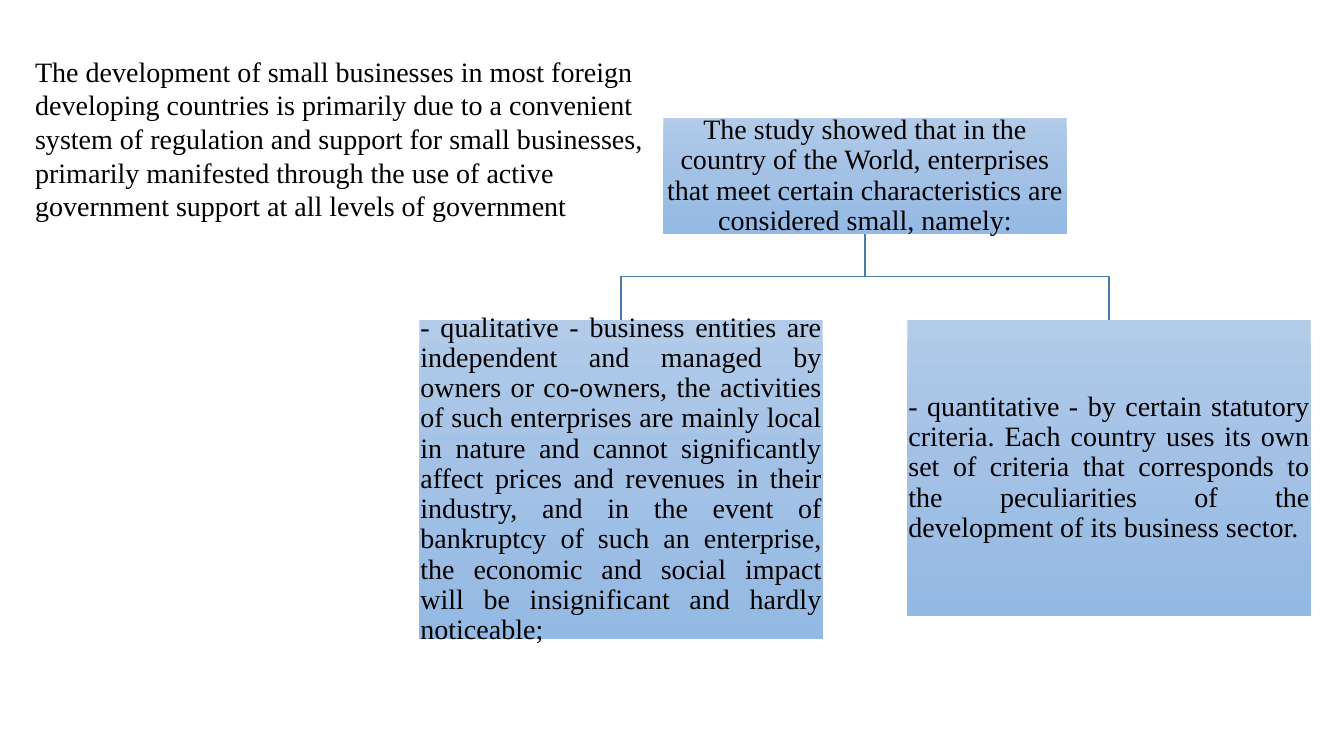
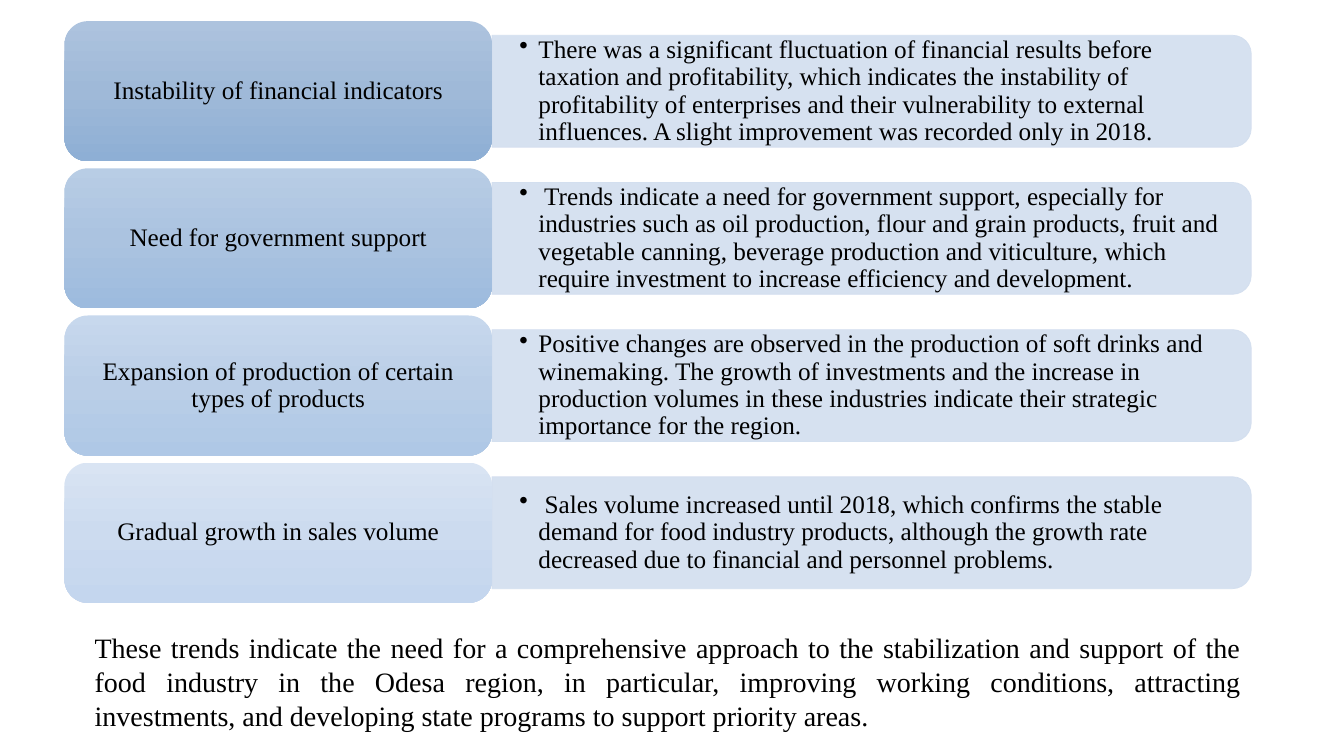
from copy import deepcopy

from pptx import Presentation
from pptx.dml.color import RGBColor
from pptx.enum.shapes import MSO_SHAPE
from pptx.enum.text import MSO_ANCHOR, MSO_AUTO_SIZE, PP_ALIGN
from pptx.oxml.ns import qn
from pptx.oxml.xmlchemy import OxmlElement
from pptx.util import Pt

PX = 9144
FONT = "Times New Roman"
INK = "000000"
LINK = "497CAB"
PANEL = "D2DEEF"
BOX_GRAD = ("B1CBE9", "A3C1E5", "93B9E4")
LEFT, CENTER, JUSTIFY = PP_ALIGN.LEFT, PP_ALIGN.CENTER, PP_ALIGN.JUSTIFY

INTRO = (
    "The development of small businesses in most foreign developing countries is primarily due to "
    "a convenient system of regulation and support for small businesses, primarily manifested "
    "through the use of active government support at all levels of government"
)
STUDY = (
    "The study showed that in the country of the World, enterprises that meet certain "
    "characteristics are considered small, namely:"
)
QUALITATIVE = (
    "- qualitative - business entities are independent and managed by owners or co-owners, the "
    "activities of such enterprises are mainly local in nature and cannot significantly affect "
    "prices and revenues in their industry, and in the event of bankruptcy of such an enterprise, "
    "the economic and social impact will be insignificant and hardly noticeable;"
)
QUANTITATIVE = (
    "- quantitative - by certain statutory criteria. Each country uses its own set of criteria "
    "that corresponds to the peculiarities of the development of its business sector."
)
TRENDS = [
    ("Instability of financial indicators",
     "There was a significant fluctuation of financial results before taxation and profitability, "
     "which indicates the instability of profitability of enterprises and their vulnerability to "
     "external influences. A slight improvement was recorded only in 2018.",
     ("ADC3DE", "9FB9D8", "8EAFD5")),
    ("Need for government support",
     " Trends indicate a need for government support, especially for industries such as oil "
     "production, flour and grain products, fruit and vegetable canning, beverage production and "
     "viticulture, which require investment to increase efficiency and development.",
     ("B8CDE5", "ABC3E0", "9DBBDE")),
    ("Expansion of production of certain types of products",
     "Positive changes are observed in the production of soft drinks and winemaking. The growth of "
     "investments and the increase in production volumes in these industries indicate their "
     "strategic importance for the region.",
     ("C7D8ED", "BACEE7", "AFC8E6")),
    ("Gradual growth in sales volume",
     " Sales volume increased until 2018, which confirms the stable demand for food industry "
     "products, although the growth rate decreased due to financial and personnel problems.",
     ("D9E4F3", "CCDBEF", "C4D6EE")),
]
SUMMARY = (
    "These trends indicate the need for a comprehensive approach to the stabilization and support "
    "of the food industry in the Odesa region, in particular, improving working conditions, "
    "attracting investments, and developing state programs to support priority areas."
)


def rgb(value):
    """Turn a hex string into a colour."""
    return RGBColor.from_string(value)


def emu(*values):
    """Turn px lengths into EMU."""
    return [round(v * PX) for v in values]


def write(sp, text, size=20, align=LEFT, spacing=None, inset=(10, 5), anchor=MSO_ANCHOR.TOP,
          bullet=False, grow=False):
    """Fill a shape with one formatted paragraph."""
    tf = sp.text_frame
    tf.word_wrap = True
    tf.auto_size = MSO_AUTO_SIZE.SHAPE_TO_FIT_TEXT if grow else MSO_AUTO_SIZE.NONE
    tf.vertical_anchor = anchor
    tf.margin_left, tf.margin_top = tf.margin_right, tf.margin_bottom = emu(*inset)
    p = tf.paragraphs[0]
    if bullet:
        pPr = p._p.get_or_add_pPr()
        hang = emu(19)[0]
        pPr.set("marL", str(hang))
        pPr.set("indent", str(-hang))
        mark = OxmlElement("a:buChar")
        mark.set("char", "•")
        pPr.append(mark)
    p.alignment = align
    if spacing:
        p.line_spacing = spacing
    r = p.add_run()
    r.text = text
    r.font.name, r.font.size = FONT, Pt(size)
    r.font.color.rgb = rgb(INK)


def text_box(s, box, text, **fmt):
    """Add a text box with formatted text."""
    write(s.shapes.add_textbox(*emu(*box)), text, **fmt)


def gradient_shape(s, kind, box, colors, text, **fmt):
    """Add a captioned shape with a three-stop vertical gradient."""
    sp = s.shapes.add_shape(kind, *emu(*box))
    sp.shadow.inherit = False
    sp.line.fill.background()
    sp.fill.gradient()
    sp.fill.gradient_angle = 270
    stops = sp._element.spPr.find(qn("a:gradFill")).find(qn("a:gsLst"))
    stops.insert(1, deepcopy(stops[0]))
    for i, (stop, color) in enumerate(zip(sp.fill.gradient_stops, colors)):
        stop.color.rgb = rgb(color)
        stop.position = i / 2
    write(sp, text, spacing=0.9, anchor=MSO_ANCHOR.MIDDLE, **fmt)


def link(s, parent, child):
    """Draw an elbow from the bottom of one box to the top of another."""
    x0, y0 = parent[0] + parent[2] / 2, parent[1] + parent[3]
    x1, y1 = child[0] + child[2] / 2, child[1]
    mid = (y0 + y1) / 2
    path = s.shapes.build_freeform(*emu(x0, y0), scale=1.0)
    path.add_line_segments([emu(x0, mid), emu(x1, mid), emu(x1, y1)], close=False)
    sp = path.convert_to_shape()
    sp.shadow.inherit = False
    sp.fill.background()
    sp.line.color.rgb = rgb(LINK)
    sp.line.width = Pt(1)


def panel(s, x, y, w, h):
    """Add a translucent panel with rounded right corners."""
    sp = s.shapes.add_shape(MSO_SHAPE.ROUND_2_SAME_RECTANGLE,
                            *emu(x + (w - h) / 2, y + (h - w) / 2, h, w))
    sp.rotation = 90
    sp.shadow.inherit = False
    sp.fill.solid()
    sp.fill.fore_color.rgb = sp.line.color.rgb = rgb(PANEL)
    sp.line.width = Pt(0.5)
    for color in sp._element.spPr.iter(qn("a:srgbClr")):
        alpha = OxmlElement("a:alpha")
        alpha.set("val", "90000")
        color.append(alpha)


def tree(s, x, y, w):
    """Place the parent box, its two children and their links."""
    box_w, top = 400, y + 200
    parent = (x + (w - box_w) / 2, y, box_w, 115)
    children = [((x, top, box_w, 317), QUALITATIVE),
                ((x + w - box_w, top, box_w, 294), QUANTITATIVE)]
    for box, _ in children:
        link(s, parent, box)
    for box, text, align in [(parent, STUDY, CENTER)] + [(*c, JUSTIFY) for c in children]:
        gradient_shape(s, MSO_SHAPE.RECTANGLE, box, BOX_GRAD, text, align=align, inset=(1, 1))


def trend_row(s, x, y, w, h, label, text, colors):
    """Place a label card and the panel that explains it."""
    card_w, pad = 424, 14
    px, pw, ph = x + card_w, w - card_w, h - 2 * pad
    panel(s, px, y + pad, pw, ph)
    text_box(s, (px, y + pad + 5, pw - 5, ph - 10), text, size=18, spacing=0.9, inset=(27, 14),
             anchor=MSO_ANCHOR.MIDDLE, bullet=True)
    gradient_shape(s, MSO_SHAPE.ROUNDED_RECTANGLE, (x, y, card_w, h), colors, label, size=18,
                   align=CENTER, inset=(7, 4))


def criteria_slide(prs):
    """Build the slide on what makes a business small."""
    s = prs.slides.add_slide(prs.slide_layouts[6])
    tree(s, 416, 117, 884)
    text_box(s, (25, 49, 667, 178), INTRO, grow=True)


def trends_slide(prs):
    """Build the slide on food industry trends."""
    s = prs.slides.add_slide(prs.slide_layouts[6])
    for i, row in enumerate(TRENDS):
        trend_row(s, 64, 21 + 146 * i, 1177, 139, *row)
    text_box(s, (84, 621, 1157, 111), SUMMARY, align=JUSTIFY, grow=True)


def main():
    """Build and save the presentation."""
    prs = Presentation()
    prs.slide_width, prs.slide_height = emu(1333, 750)
    criteria_slide(prs)
    trends_slide(prs)
    prs.save("out.pptx")


if __name__ == "__main__":
    main()
